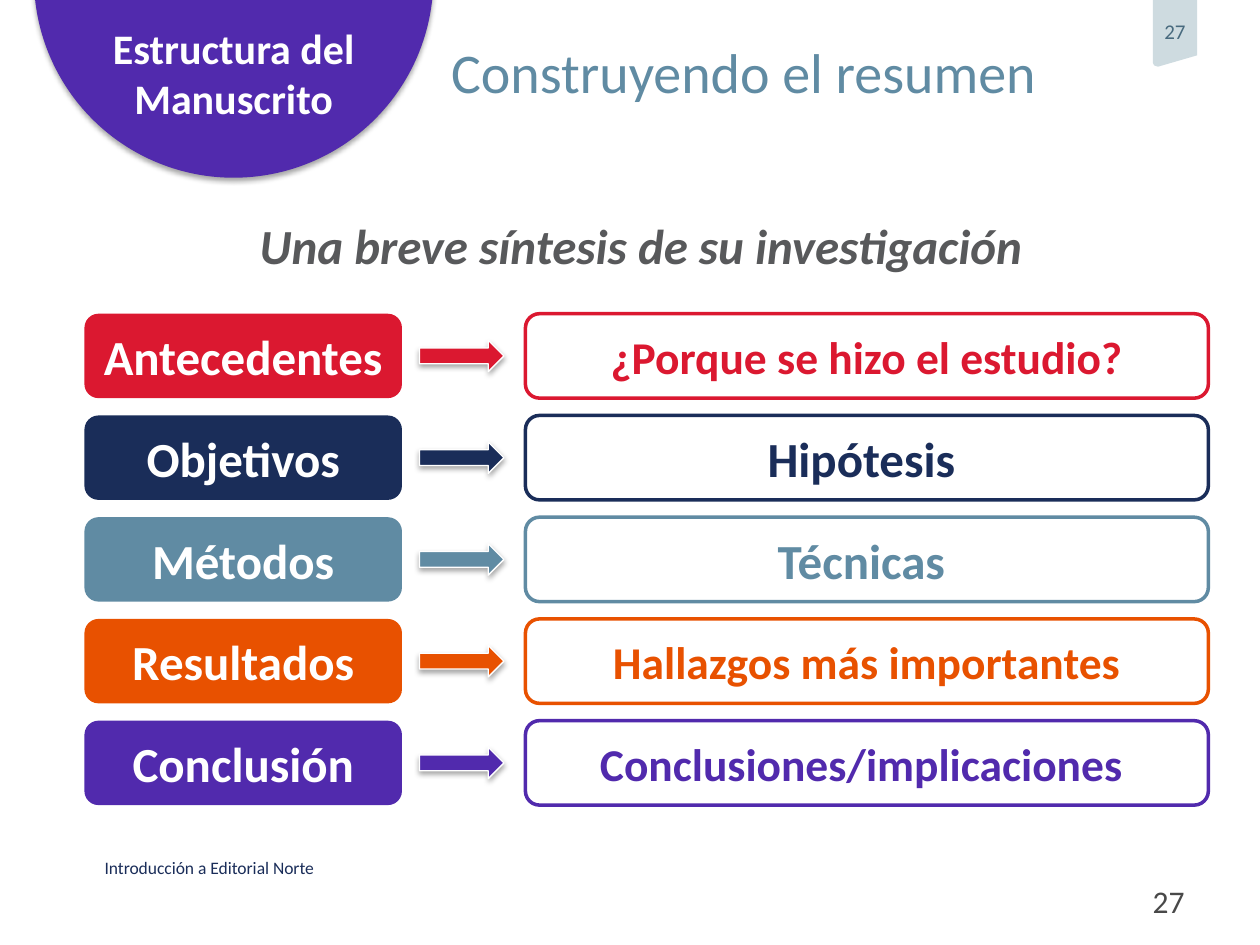
from lxml import etree
from pptx import Presentation
from pptx.dml.color import RGBColor
from pptx.enum.shapes import MSO_SHAPE
from pptx.enum.text import MSO_ANCHOR, MSO_AUTO_SIZE, PP_ALIGN
from pptx.oxml import parse_xml
from pptx.util import Inches, Pt

LEFT, CENTER, RIGHT = PP_ALIGN.LEFT, PP_ALIGN.CENTER, PP_ALIGN.RIGHT
TOP, MIDDLE = MSO_ANCHOR.TOP, MSO_ANCHOR.MIDDLE
ROUNDED, ARROW, CHORD = MSO_SHAPE.ROUNDED_RECTANGLE, MSO_SHAPE.RIGHT_ARROW, MSO_SHAPE.CHORD
FIT = MSO_AUTO_SIZE.SHAPE_TO_FIT_TEXT

FONT = "Calibri"
COLORS = {
    "red": "DB1830", "navy": "1A2D59", "steel": "608BA3", "orange": "E85100",
    "purple": "512AAD", "white": "FFFFFF", "tab": "CEDBE0", "tab_text": "486A7E",
    "gray": "58595B", "dark": "494949",
}
SECTIONS = [
    ("Antecedentes", "¿Porque se hizo el estudio?", 26, "red"),
    ("Objetivos", "Hipótesis ", 28, "navy"),
    ("Métodos", "Técnicas ", 28, "steel"),
    ("Resultados", "Hallazgos más importantes", 26, "orange"),
    ("Conclusión", "Conclusiones/implicaciones ", 26, "purple"),
]
TAB = [(9.15, 0), (9.5, 0), (9.5, 0.44), (9.19, 0.53), (9.16, 0.52), (9.15, 0.5)]
ROW_TOP, ROW_STEP, ROW_H, ARROW_H = 2.49, 0.8075, 0.67, 0.25
DEFAULT_INS = (0.1, 0.05, 0.1, 0.05)
NO_INS = (0, 0, 0, 0)
SHADOW = """<a:effectLst xmlns:a="http://schemas.openxmlformats.org/drawingml/2006/main">
<a:outerShdw blurRad="40000" dist="23000" dir="5400000" rotWithShape="0">
<a:srgbClr val="000000"><a:alpha val="35000"/></a:srgbClr></a:outerShdw></a:effectLst>"""


def rgb(name):
    return RGBColor.from_string(COLORS[name])


def write(s, text, size, color, align=CENTER, anchor=MIDDLE, bold=False, italic=False,
          ins=DEFAULT_INS, wrap=True):
    tf = s.text_frame
    tf.word_wrap = wrap
    tf.vertical_anchor = anchor
    tf.margin_left, tf.margin_top, tf.margin_right, tf.margin_bottom = map(Inches, ins)
    p = tf.paragraphs[0]
    p.alignment = align
    r = p.add_run()
    r.text = text
    r.font.name, r.font.size = FONT, Pt(size)
    r.font.bold, r.font.italic = bold, italic
    r.font.color.rgb = rgb(color)


def paint(s, fill, line=None, width=1, shadow=False):
    s.fill.solid()
    s.fill.fore_color.rgb = rgb(fill)
    if line:
        s.line.color.rgb = rgb(line)
        s.line.width = Pt(width)
    else:
        s.line.fill.background()
    s.shadow.inherit = False
    if shadow:
        sp_pr = s.fill._xPr
        sp_pr.replace(sp_pr.find("{*}effectLst"), parse_xml(etree.tostring(etree.fromstring(SHADOW))))


def add_text(shapes, box, *args, fit=False, **style):
    s = shapes.add_textbox(*map(Inches, box))
    write(s, *args, **style)
    if fit:
        s.text_frame.auto_size = FIT


def add_shape(shapes, kind, box, *args, **style):
    s = shapes.add_shape(kind, *map(Inches, box))
    paint(s, *args, **style)
    return s


def main():
    prs = Presentation()
    prs.slide_width, prs.slide_height = Inches(10), Inches(7.5)
    shapes = prs.slides.add_slide(prs.slide_layouts[6]).shapes

    add_text(shapes, (0.83, 6.8, 3.55, 0.17), "Introducción a Editorial Norte", 10, "navy",
             align=LEFT, ins=NO_INS, fit=True)

    points = [(Inches(x), Inches(y)) for x, y in TAB]
    builder = shapes.build_freeform(*points[0])
    builder.add_line_segments(points[1:])
    tab = builder.convert_to_shape()
    paint(tab, "tab")
    write(tab, "27", 12, "tab_text", ins=(0, 0, 0, 0.04), wrap=False)

    badge = add_shape(shapes, CHORD, (0.27, -1.76, 3.17, 3.17), "purple", shadow=True)
    badge.rotation = 292
    add_text(shapes, (0.69, 0.13, 2.33, 0.91), "Estructura del Manuscrito", 24, "white",
             anchor=TOP, bold=True, fit=True)
    add_text(shapes, (7.17, 6.95, 2.33, 0.4), "27", 18, "dark", align=RIGHT, anchor=TOP)
    add_text(shapes, (3.58, 0.3, 6.42, 0.93), "Construyendo el resumen", 32, "steel",
             align=LEFT, anchor=TOP, ins=NO_INS)

    for i, (section, answer, size, color) in enumerate(SECTIONS):
        top = ROW_TOP + i * ROW_STEP
        label = add_shape(shapes, ROUNDED, (0.67, top, 2.52, ROW_H), color)
        write(label, section, 28, "white", bold=True)
        box = add_shape(shapes, ROUNDED, (4.17, top, 5.42, ROW_H), "white", line=color, width=2)
        write(box, answer, size, color, bold=True)
        add_shape(shapes, ARROW, (3.33, top + (ROW_H - ARROW_H) / 2, 0.67, ARROW_H), color,
                  line="white", width=0.75, shadow=True)

    add_text(shapes, (1.54, 1.66, 7.09, 0.57), "Una breve síntesis de su investigación", 28, "gray",
             anchor=TOP, bold=True, italic=True, fit=True)

    prs.save("out.pptx")


if __name__ == "__main__":
    main()
